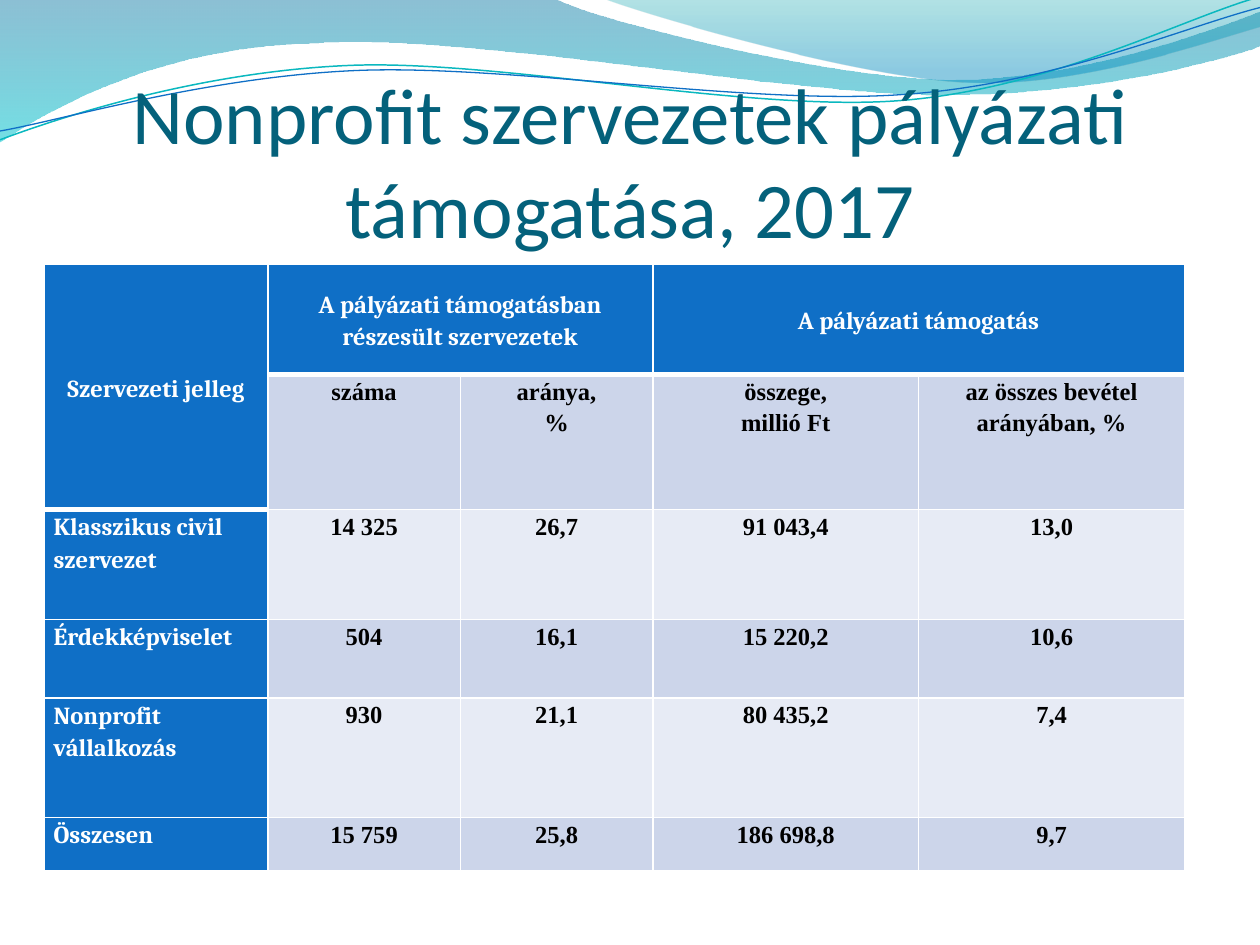
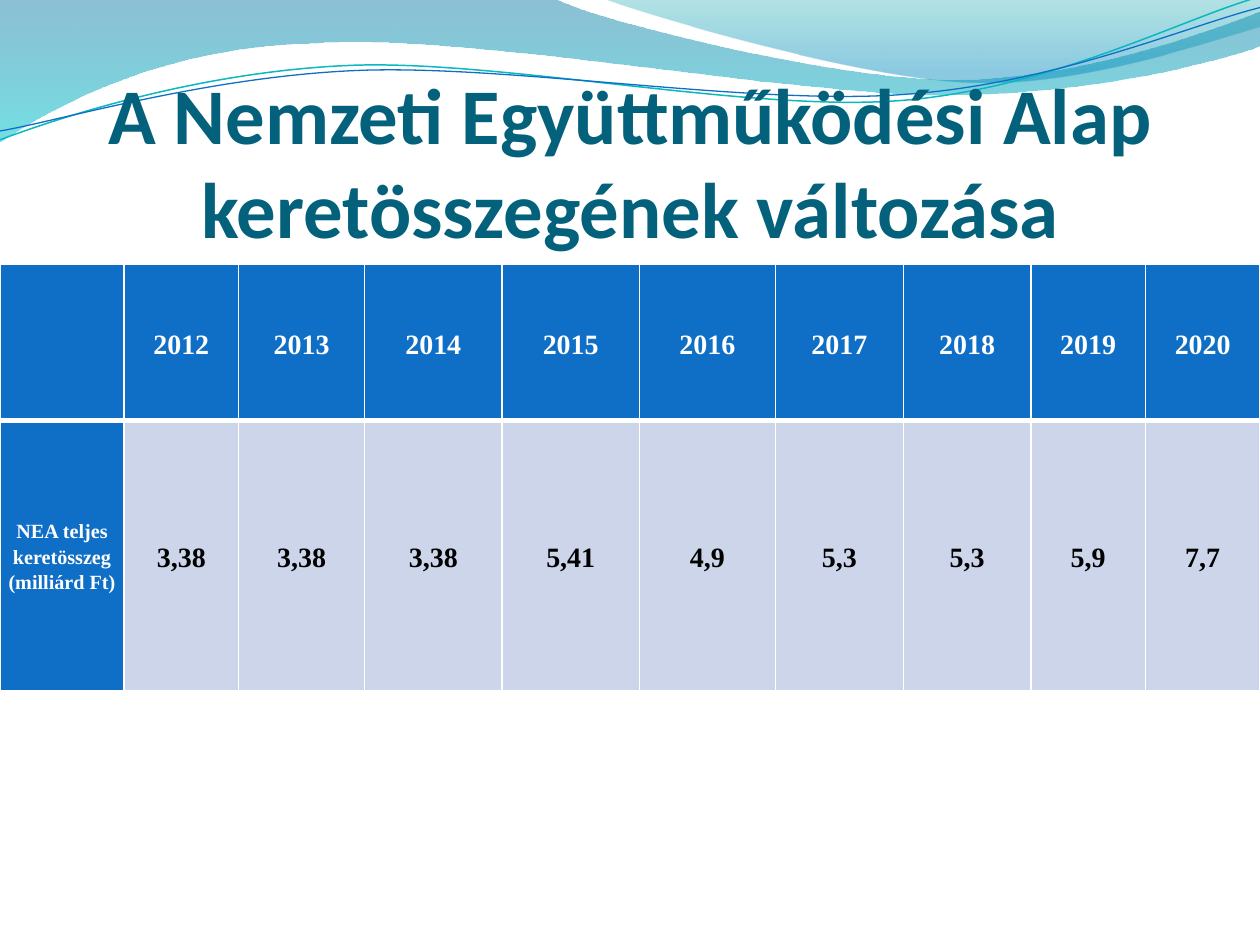
import copy
import pptx
import pptx.util
import pptx.dml.color
import pptx.enum.text
import pptx.oxml
import pptx.oxml.ns
from lxml import etree

Cm = pptx.util.Cm
Pt = pptx.util.Pt
RGBColor = pptx.dml.color.RGBColor
ANCHOR = pptx.enum.text.MSO_ANCHOR
ALIGN = pptx.enum.text.PP_ALIGN
qn = pptx.oxml.ns.qn

WHITE = RGBColor(0xFF, 0xFF, 0xFF)
BLACK = RGBColor(0, 0, 0)
TITLE_BLUE = RGBColor(0x04, 0x61, 0x7B)
BLUE = RGBColor(0x0F, 0x6F, 0xC6)
TEAL = RGBColor(0x0A, 0xB8, 0xBF)
BANDS = [RGBColor(0xE7, 0xEB, 0xF5), RGBColor(0xCC, 0xD5, 0xEA)]
DEEP_BLUE = RGBColor(0x00, 0x74, 0xA1)
AQUA = RGBColor(0x00, 0xC6, 0xCF)
SEA_GREEN = RGBColor(0x00, 0xA1, 0xA9)
SEA_BLUE = RGBColor(0x00, 0x8B, 0xBF)

WAVE_UNIT = Cm(2.54) / 100
TITLE_BOTTOM = 5.13
TABLE_TOP = 5.33

WAVES = [
    {"segments": [(0, 0), (440, -1), (476, 17, 664, 63, 758, 63),
                  (853, 63, 958, 26, 1000, 9), (1001, 36),
                  (983, 44, 870, 76, 746, 75), (622, 75, 382, 28, 257, 34),
                  (129, 36, 46, 83, -1, 113), (0, 0)],
     "stops": [(0, DEEP_BLUE, 45), (1, AQUA, 55)]},
    {"segments": [(479, -1), (509, 11, 682, 62, 769, 65),
                  (856, 69, 961, 32, 1000, 21), (1000, 0), (479, -1)],
     "stops": [(0, SEA_GREEN, 30), (0.8, SEA_BLUE, 45)]},
    {"segments": [(0, 111), (48, 93, 158, 57, 277, 52),
                  (395, 47, 593, 89, 713, 80), (833, 71, 938, 15, 998, -2)],
     "line": (TEAL, 0.85)},
    {"segments": [(0, 104), (47, 96, 164, 61, 283, 56),
                  (403, 51, 597, 84, 717, 75), (836, 67, 941, 21, 1000, 6)],
     "line": (BLUE, 0.75)},
]

SLIDES = [
    {"title": "Nonprofit szervezetek pályázati támogatása, 2017",
     "title_height": 3.18, "title_bold": None,
     "left": 0.89,
     "cols": [4.51, 3.88, 3.88, 5.36, 5.36],
     "rows": [2.22, 2.72, 2.22, 1.58, 2.41, 1.07],
     "merges": [(0, 0, 1, 0), (0, 1, 0, 2), (0, 3, 0, 4)],
     "corner_rows": 2, "margin": 0.19, "space_after": 10,
     "size": 14, "side_size": 14, "head_font": "Cambria",
     "side_align": ALIGN.LEFT, "body_anchor": ANCHOR.TOP,
     "cells": [
         ["Szervezeti jelleg", "A pályázati támogatásban részesült szervezetek", "",
          "A pályázati támogatás", ""],
         ["", "száma", "aránya,\n%", "összege,\nmillió Ft", "az összes bevétel arányában, %"],
         ["Klasszikus civil szervezet", "14 325", "26,7", "91 043,4", "13,0"],
         ["Érdekképviselet", "504", "16,1", "15 220,2", "10,6"],
         ["Nonprofit vállalkozás", "930", "21,1", "80 435,2", "7,4"],
         ["Összesen", "15 759", "25,8", "186 698,8", "9,7"],
     ]},
    {"title": "A Nemzeti Együttműködési Alap keretösszegének változása",
     "title_height": 3.81, "title_bold": True,
     "left": 0,
     "cols": [2.5, 2.31, 2.54, 2.77, 2.77, 2.74, 2.58, 2.57, 2.31, 2.31],
     "rows": [3.15, 5.44],
     "merges": [],
     "corner_rows": 1, "margin": 0.13, "space_after": 0,
     "size": 16, "side_size": 11.5, "head_font": "Times New Roman",
     "side_align": ALIGN.CENTER, "body_anchor": ANCHOR.MIDDLE,
     "cells": [
         [""] + [str(year) for year in range(2012, 2021)],
         ["NEA teljes keretösszeg (milliárd Ft)", "3,38", "3,38", "3,38", "5,41",
          "4,9", "5,3", "5,3", "5,9", "7,7"],
     ]},
]


def set_attrs(obj, values):
    for name, value in values.items():
        setattr(obj, name, value)


def bend(sp, segments):
    outline = next(sp.element.iter(qn("a:path")))
    lines = iter(outline.findall(qn("a:lnTo")))
    for seg in segments:
        first = next(lines)
        if len(seg) == 6:
            first.tag = qn("a:cubicBezTo")
            for _ in range(2):
                line = next(lines)
                first.append(line[0])
                outline.remove(line)


def add_wave(s, wave):
    start, *segments = wave["segments"]
    points = [seg[i:i + 2] for seg in segments for i in range(0, len(seg), 2)]
    builder = s.shapes.build_freeform(*start, scale=WAVE_UNIT)
    builder.add_line_segments(points, close="stops" in wave)
    sp = builder.convert_to_shape()
    bend(sp, segments)
    sp.shadow.inherit = False
    if "line" in wave:
        color, width = wave["line"]
        sp.fill.background()
        sp.line.color.rgb = color
        sp.line.width = Pt(width)
        return sp
    sp.line.fill.background()
    sp.fill.gradient()
    sp.fill.gradient_angle = 270
    for stop, (position, color, _) in zip(sp.fill.gradient_stops, wave["stops"]):
        stop.position = position
        stop.color.rgb = color
    for clr, (_, _, opacity) in zip(sp.element.iter(qn("a:srgbClr")), wave["stops"]):
        etree.SubElement(clr, qn("a:alpha")).set("val", str(opacity * 1000))
    return sp


def add_waves_to_master(prs, s):
    tree = prs.slide_master.shapes.element
    for i, wave in enumerate(WAVES):
        sp = add_wave(s, wave)
        sp.element.nvSpPr.cNvPr.id = 100 + i
        tree.insert(2 + i, sp.element)


def set_title(s, content):
    sp = s.shapes.title
    height = content["title_height"]
    set_attrs(sp, {"left": Cm(1.27), "top": Cm(TITLE_BOTTOM - height),
                   "width": Cm(22.86), "height": Cm(height)})
    tf = sp.text_frame
    tf.text = content["title"]
    set_attrs(tf, {"margin_left": 0, "margin_right": 0, "margin_top": Cm(0.13), "margin_bottom": 0,
                   "vertical_anchor": ANCHOR.BOTTOM, "word_wrap": True,
                   "auto_size": pptx.enum.text.MSO_AUTO_SIZE.NONE})
    p = tf.paragraphs[0]
    p.alignment = ALIGN.CENTER
    font = p.runs[0].font
    set_attrs(font, {"name": "Calibri", "size": Pt(45), "bold": content["title_bold"]})
    font.color.rgb = TITLE_BLUE


def set_borders(cell, top, bottom):
    tcPr = cell._tc.get_or_add_tcPr()
    for i, (side, width) in enumerate([("L", 1), ("R", 1), ("T", top), ("B", bottom)]):
        ln = etree.Element(qn("a:ln" + side), w=str(Pt(width)))
        fill = etree.SubElement(ln, qn("a:solidFill"))
        etree.SubElement(fill, qn("a:srgbClr")).set("val", str(WHITE))
        tcPr.insert(i, ln)


def format_cell(cell, text, r, c, tab):
    head_rows = tab["corner_rows"] if c == 0 else 1
    in_head = r < head_rows
    is_side = c == 0 and not in_head
    blue = in_head or is_side
    cell.fill.solid()
    cell.fill.fore_color.rgb = BLUE if blue else BANDS[r % 2]
    set_borders(cell, 3 if r == head_rows else 1, 3 if in_head else 1)
    set_attrs(cell, {"margin_left": Cm(tab["margin"]), "margin_right": Cm(tab["margin"]),
                     "margin_top": 0, "margin_bottom": 0,
                     "vertical_anchor": ANCHOR.MIDDLE if in_head else tab["body_anchor"]})
    if not text:
        return
    p = cell.text_frame.paragraphs[0]
    p.text = text
    set_attrs(p, {"alignment": tab["side_align"] if is_side else ALIGN.CENTER,
                  "line_spacing": 1.15, "space_after": Pt(tab["space_after"])})
    for run in p.runs:
        set_attrs(run.font, {"name": tab["head_font"] if blue else "Times New Roman",
                             "size": Pt(tab["side_size"] if is_side else tab["size"]),
                             "bold": True})
        run.font.color.rgb = WHITE if blue else BLACK
    for br in cell._tc.iter(qn("a:br")):
        br.insert(0, copy.deepcopy(next(cell._tc.iter(qn("a:rPr")))))


def add_grid(s, tab):
    cols, rows = tab["cols"], tab["rows"]
    frame = s.shapes.add_table(len(rows), len(cols), Cm(tab["left"]), Cm(TABLE_TOP),
                               Cm(sum(cols)), Cm(sum(rows)))
    tbl = frame.table
    set_attrs(tbl, {"first_row": False, "horz_banding": False})
    for col, width in zip(tbl.columns, cols):
        col.width = Cm(width)
    for row, height in zip(tbl.rows, rows):
        row.height = Cm(height)
    for r1, c1, r2, c2 in tab["merges"]:
        tbl.cell(r1, c1).merge(tbl.cell(r2, c2))
    for r, texts in enumerate(tab["cells"]):
        for c, text in enumerate(texts):
            format_cell(tbl.cell(r, c), text, r, c, tab)


def main():
    prs = pptx.Presentation()
    prs.slide_width, prs.slide_height = Cm(25.4), Cm(19.05)
    for i, content in enumerate(SLIDES):
        s = prs.slides.add_slide(prs.slide_layouts[5])
        if i == 0:
            add_waves_to_master(prs, s)
        set_title(s, content)
        add_grid(s, content)
    prs.save("out.pptx")


if __name__ == "__main__":
    main()
